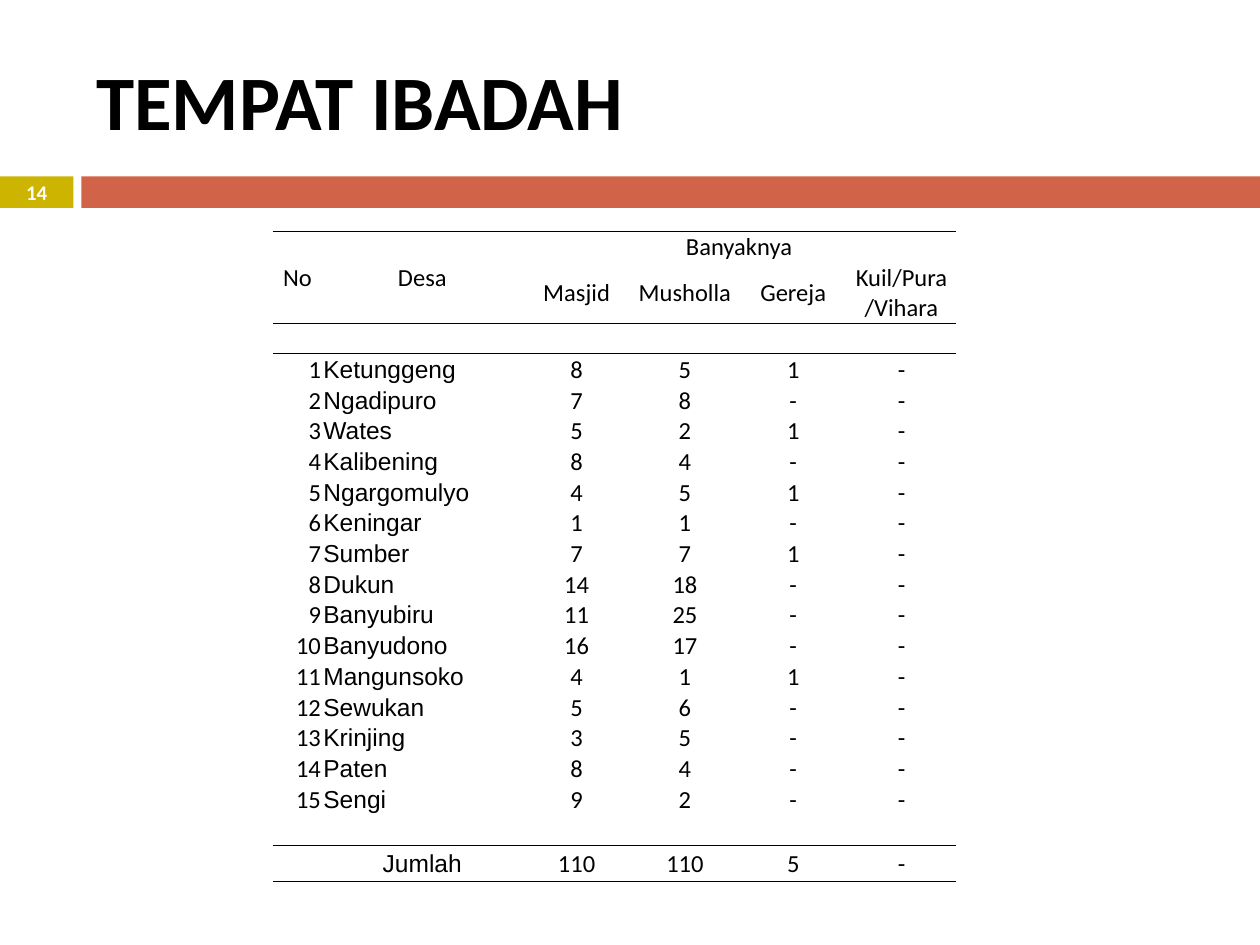
from dataclasses import dataclass

from lxml.etree import SubElement
from pptx import Presentation
from pptx.dml.color import RGBColor
from pptx.enum.shapes import MSO_SHAPE
from pptx.enum.text import MSO_ANCHOR, PP_ALIGN
from pptx.oxml.ns import qn
from pptx.slide import Slide
from pptx.table import Table, _Cell
from pptx.text.text import _Paragraph
from pptx.util import Pt

COLORS = {"text": "000000", "light": "FFFFFF", "number": "CCB400", "band": "D16349"}
PLAIN_STYLE = "{2D5ABB26-0587-4C30-8999-92F81FD0307C}"
COLUMN_WIDTHS = [28.1, 114.5, 61.9, 61.9, 61.9, 61.9]
ROW_HEIGHT, TOTAL_HEIGHT = 15.12, 20.8
HEADER_ROWS = 3
CELL_SIZE = 14
INSET = 0.72

HEADERS = {
    (0, 0): "No", (0, 1): "Desa", (0, 2): "Banyaknya",
    (1, 2): "Masjid", (1, 3): "Musholla", (1, 4): "Gereja",
    (1, 5): "Kuil/Pura", (2, 5): "/Vihara",
}
MERGES = [((0, 0), (2, 0)), ((0, 1), (2, 1)), ((0, 2), (0, 5))]
MERGES += [((1, column), (2, column)) for column in (2, 3, 4)]
BOTTOM_HEADERS = {(0, 2), (1, 5), (2, 5)}


@dataclass(frozen=True)
class Village:
    name: str
    masjid: str
    musholla: str
    gereja: str = "-"
    kuil: str = "-"

    def values(self) -> list[str]:
        return [self.name, self.masjid, self.musholla, self.gereja, self.kuil]


@dataclass(frozen=True)
class Box:
    left: float
    top: float
    width: float
    height: float

    def lengths(self) -> list[Pt]:
        return [Pt(side) for side in (self.left, self.top, self.width, self.height)]


VILLAGES = [
    Village("Ketunggeng", "8", "5", "1"),
    Village("Ngadipuro", "7", "8"),
    Village("Wates", "5", "2", "1"),
    Village("Kalibening", "8", "4"),
    Village("Ngargomulyo", "4", "5", "1"),
    Village("Keningar", "1", "1"),
    Village("Sumber", "7", "7", "1"),
    Village("Dukun", "14", "18"),
    Village("Banyubiru", "11", "25"),
    Village("Banyudono", "16", "17"),
    Village("Mangunsoko", "4", "1", "1"),
    Village("Sewukan", "5", "6"),
    Village("Krinjing", "3", "5"),
    Village("Paten", "8", "4"),
    Village("Sengi", "9", "2"),
]
TOTAL = Village("Jumlah", "110", "110", "5")
FIRST_VILLAGE_ROW = HEADER_ROWS + 1
TOTAL_ROW = FIRST_VILLAGE_ROW + len(VILLAGES) + 1
TOP_RULES = {0, HEADER_ROWS, TOTAL_ROW}
BOTTOM_RULES = {HEADER_ROWS - 1, TOTAL_ROW - 1, TOTAL_ROW}


def add_span(para: _Paragraph, text: str, size: float, color: str = "text",
             font: str = "Calibri", bold: bool = False) -> None:
    span = para.add_run()
    span.text = text
    span.font.size = Pt(size)
    span.font.name = font
    span.font.bold = bold
    span.font.color.rgb = RGBColor.from_string(COLORS[color])


def add_bar(page: Slide, box: Box, color: str) -> None:
    bar = page.shapes.add_shape(MSO_SHAPE.RECTANGLE, *box.lengths())
    bar.shadow.inherit = False
    bar.fill.solid()
    bar.fill.fore_color.rgb = RGBColor.from_string(COLORS[color])
    bar.line.fill.background()


def add_label(page: Slide, box: Box, text: str, size: float, color: str,
              align: PP_ALIGN) -> None:
    frame = page.shapes.add_textbox(*box.lengths()).text_frame
    frame.word_wrap = True
    frame.vertical_anchor = MSO_ANCHOR.MIDDLE
    para = frame.paragraphs[0]
    para.alignment = align
    add_span(para, text, size, color, bold=True)


def add_border(cell: _Cell, side: str) -> None:
    line = SubElement(cell._tc.get_or_add_tcPr(), qn(f"a:{side}"), w=str(Pt(0.5)))
    fill = SubElement(line, qn("a:solidFill"))
    SubElement(fill, qn("a:srgbClr"), val=COLORS["text"])


def style_cell(cell: _Cell, row: int) -> None:
    cell.margin_left = cell.margin_right = cell.margin_top = Pt(INSET)
    cell.margin_bottom = Pt(0)
    if row in TOP_RULES:
        add_border(cell, "lnT")
    if row + cell.span_height - 1 in BOTTOM_RULES:
        add_border(cell, "lnB")
    cell.fill.background()


def write_cell(cell: _Cell, text: str, anchor: MSO_ANCHOR, align: PP_ALIGN,
               font: str = "Calibri") -> None:
    cell.vertical_anchor = anchor
    para = cell.text_frame.paragraphs[0]
    para.alignment = align
    add_span(para, text, CELL_SIZE, font=font)


def fill_headers(table: Table) -> None:
    for position, text in HEADERS.items():
        anchor = MSO_ANCHOR.BOTTOM if position in BOTTOM_HEADERS else MSO_ANCHOR.MIDDLE
        write_cell(table.cell(*position), text, anchor, PP_ALIGN.CENTER)


def fill_record(table: Table, row: int, village: Village, name_align: PP_ALIGN,
                value_anchor: MSO_ANCHOR) -> None:
    name, *counts = village.values()
    write_cell(table.cell(row, 1), name, MSO_ANCHOR.MIDDLE, name_align, "Arial")
    for column, count in enumerate(counts, 2):
        write_cell(table.cell(row, column), count, value_anchor, PP_ALIGN.CENTER)


def add_village_table(page: Slide, box: Box) -> None:
    holder = page.shapes.add_table(TOTAL_ROW + 1, len(COLUMN_WIDTHS), *box.lengths())
    table = holder.table
    table.first_row = table.horz_banding = False
    table._tbl.tblPr.find(qn("a:tableStyleId")).text = PLAIN_STYLE
    for column, width in zip(table.columns, COLUMN_WIDTHS):
        column.width = Pt(width)
    for index, row in enumerate(table.rows):
        row.height = Pt(TOTAL_HEIGHT if index == TOTAL_ROW else ROW_HEIGHT)
    holder.height = Pt(box.height)
    for start, end in MERGES:
        table.cell(*start).merge(table.cell(*end))

    fill_headers(table)
    for number, village in enumerate(VILLAGES, 1):
        row = HEADER_ROWS + number
        write_cell(table.cell(row, 0), str(number), MSO_ANCHOR.BOTTOM, PP_ALIGN.RIGHT)
        fill_record(table, row, village, PP_ALIGN.LEFT, MSO_ANCHOR.BOTTOM)
    fill_record(table, TOTAL_ROW, TOTAL, PP_ALIGN.CENTER, MSO_ANCHOR.MIDDLE)

    for index, row in enumerate(table.rows):
        for cell in row.cells:
            style_cell(cell, index)
            para = cell.text_frame.paragraphs[0]
            if not para.runs:
                ending = SubElement(para._p, qn("a:endParaRPr"), sz=str(CELL_SIZE * 100))
                SubElement(ending, qn("a:latin"), typeface="Calibri")


def main() -> None:
    deck = Presentation()
    deck.slide_width, deck.slide_height = Pt(720), Pt(540)
    page = deck.slides.add_slide(deck.slide_layouts[6])
    add_bar(page, Box(0, 100.8, 42, 18), "number")
    add_bar(page, Box(46.5, 100.8, 673.5, 18), "band")
    add_label(page, Box(48, 18, 642, 78), "TEMPAT IBADAH", 44, "text", PP_ALIGN.LEFT)
    add_label(page, Box(0, 100.3, 42, 19.2), "14", 11.9, "light", PP_ALIGN.CENTER)
    add_village_table(page, Box(156, 132, 390.2, 371.5))
    deck.save("out.pptx")


if __name__ == "__main__":
    main()
